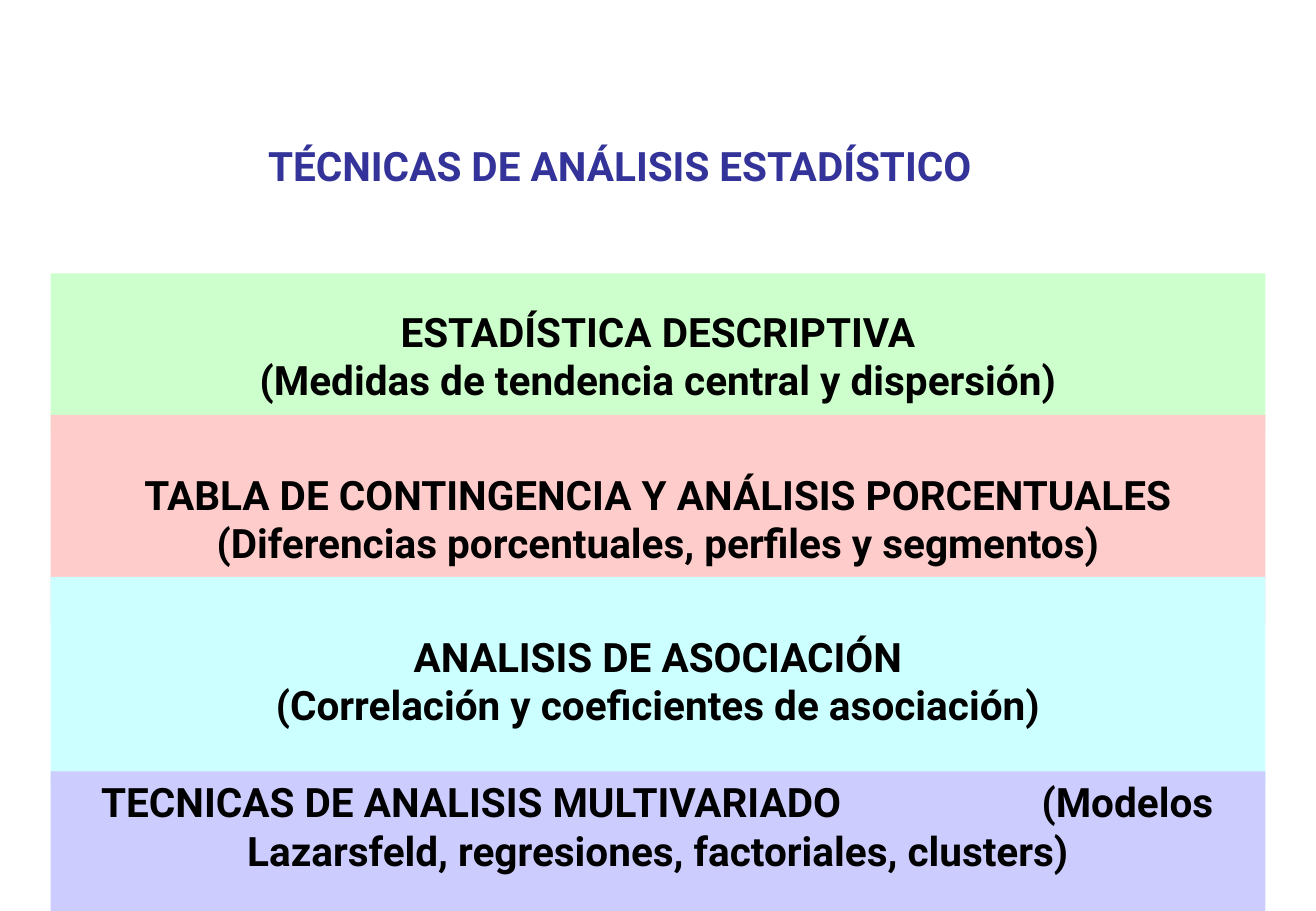
from lxml.etree import SubElement
from pptx import Presentation
from pptx.dml.color import RGBColor
from pptx.enum.shapes import MSO_SHAPE
from pptx.enum.text import MSO_ANCHOR, PP_ALIGN
from pptx.oxml.ns import qn
from pptx.util import Emu, Pt

PX = 7620
COLORS = {
    "title": "333399",
    "text": "000000",
    "green": "CCFFCC",
    "pink": "FFCCCC",
    "cyan": "CCFFFF",
    "violet": "CCCCFF",
}
BANDS = [
    ("green", 270, 160, 33,
     ["ESTADÍSTICA DESCRIPTIVA", "(Medidas de tendencia central y dispersión)"]),
    ("pink", 410, 206, 54,
     ["TABLA DE CONTINGENCIA Y ANÁLISIS PORCENTUALES",
      "(Diferencias porcentuales, perfiles y segmentos)"]),
    ("cyan", 570, 206, 54,
     ["ANALISIS DE ASOCIACIÓN", "(Correlación y coeficientes de asociación)"]),
    ("violet", 762, 138, 6,
     ["TECNICAS DE ANALISIS MULTIVARIADO\t(Modelos",
      "Lazarsfeld, regresiones, factoriales, clusters)"]),
]


def px(n):
    """Convert whole pixels to EMU."""
    return Emu(n * PX)


def rgb(name):
    """Look up a named colour."""
    return RGBColor.from_string(COLORS[name])


def add_tab_stop(p, pos):
    """Give a paragraph one left tab stop."""
    tabs = SubElement(p._p.get_or_add_pPr(), qn("a:tabLst"))
    SubElement(tabs, qn("a:tab"), pos=str(px(pos)), algn="l")


def write_lines(tf, lines, color, align):
    """Fill a text frame with one bold paragraph per line."""
    tf.word_wrap = True
    for i, line in enumerate(lines):
        p = tf.add_paragraph() if i else tf.paragraphs[0]
        p.text = line
        p.alignment = align
        if "\t" in line:
            p.alignment = PP_ALIGN.LEFT
            add_tab_stop(p, 929)
        p.font.name = "Roboto"
        p.font.size = Pt(24)
        p.font.bold = True
        p.font.color.rgb = rgb(color)


def add_title(s, text):
    """Add the slide heading."""
    sp = s.shapes.add_textbox(px(253), px(133), px(796), px(60))
    write_lines(sp.text_frame, [text], "title", PP_ALIGN.LEFT)


def add_band(s, fill, top, height, inset, lines):
    """Add one coloured band with its technique."""
    sp = s.shapes.add_shape(MSO_SHAPE.RECTANGLE, px(50), px(top), px(1200), px(height))
    sp.shadow.inherit = False
    sp.fill.solid()
    sp.fill.fore_color.rgb = rgb(fill)
    sp.line.fill.background()
    tf = sp.text_frame
    tf.vertical_anchor = MSO_ANCHOR.TOP
    tf.margin_left = tf.margin_right = px(50)
    tf.margin_top = px(inset)
    write_lines(tf, lines, "text", PP_ALIGN.CENTER)


def main():
    """Build and save the slide."""
    prs = Presentation()
    prs.slide_width, prs.slide_height = px(1300), px(900)
    s = prs.slides.add_slide(prs.slide_layouts[6])
    add_title(s, "TÉCNICAS DE ANÁLISIS ESTADÍSTICO")
    for band in BANDS:
        add_band(s, *band)
    prs.save("out.pptx")


if __name__ == "__main__":
    main()
